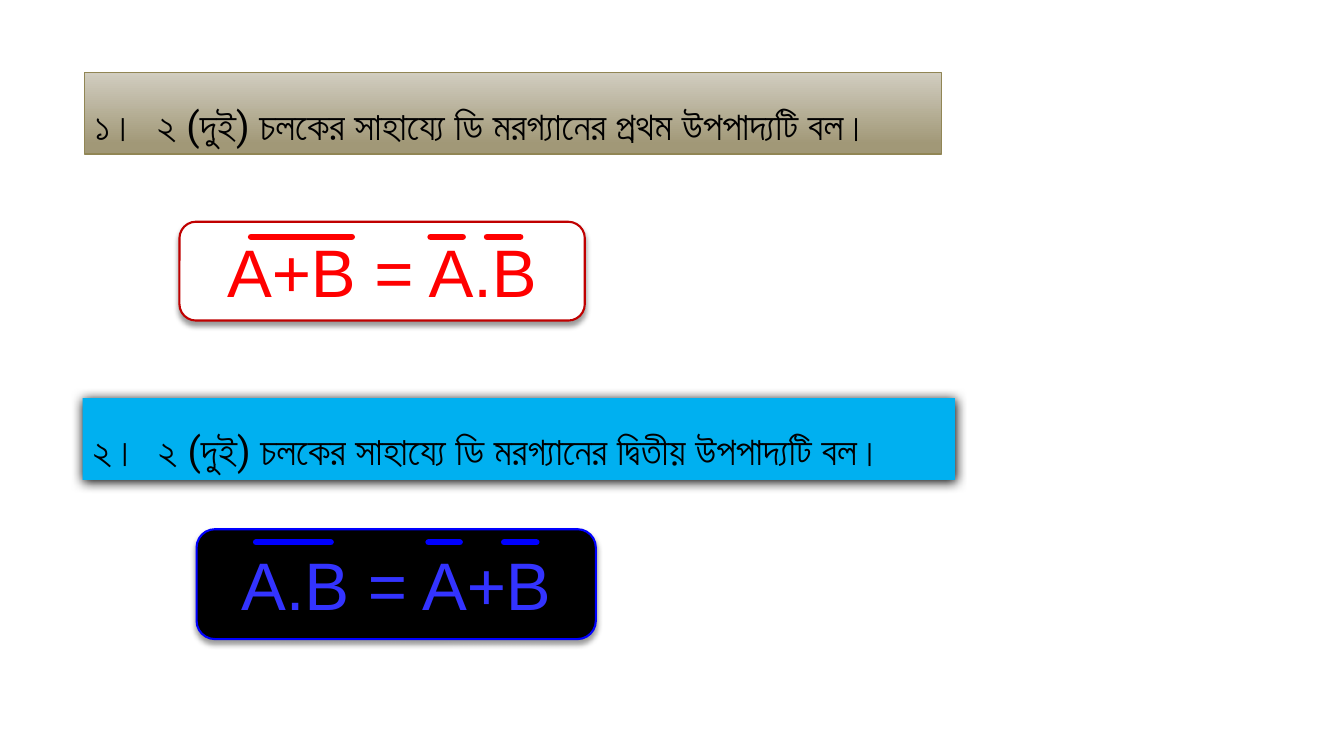
from lxml.etree import SubElement
from pptx import Presentation
from pptx.dml.color import RGBColor
from pptx.enum.shapes import MSO_CONNECTOR, MSO_SHAPE
from pptx.enum.text import MSO_ANCHOR, MSO_AUTO_SIZE, PP_ALIGN
from pptx.oxml.ns import qn
from pptx.util import Inches, Pt

COLORS = {
    "text": "000000", "sand_light": "D1CDC0", "sand_dark": "A19877", "sand_line": "918655",
    "sky": "00B0F0", "white": "FFFFFF", "black": "000000", "dark_red": "C00000",
    "red": "FF0000", "blue": "0000FF", "soft_blue": "3333FF",
}
STRONG_SHADOW = {"opacity": 100, "blur": 8.5, "distance": 1}
SOFT_SHADOW = {"opacity": 40, "blur": 4, "distance": 3}
QUESTION_FRAME = {
    "word_wrap": True, "vertical_anchor": MSO_ANCHOR.TOP,
    "auto_size": MSO_AUTO_SIZE.SHAPE_TO_FIT_TEXT,
}
FORMULA_FRAME = {"word_wrap": True, "vertical_anchor": MSO_ANCHOR.MIDDLE}
QUESTION_FONT = {"name": "Roboto", "size": Pt(28)}
FORMULA_FONT = {"name": "Arial", "size": Pt(48)}


def color(name):
    """Return the named palette colour."""
    return RGBColor.from_string(COLORS[name])


def apply(target, values):
    """Set every attribute of a dict of format values."""
    for name, value in values.items():
        setattr(target, name, value)


def fill_shape(shape, fills):
    """Fill a shape with one colour, or with a downward gradient of two."""
    if len(fills) == 1:
        shape.fill.solid()
        shape.fill.fore_color.rgb = color(fills[0])
        return
    shape.fill.gradient()
    shape.fill.gradient_angle = 270
    for stop, name, position in zip(shape.fill.gradient_stops, fills, (0, 0.88)):
        stop.color.rgb = color(name)
        stop.position = position


def outline(line, name, width):
    """Give a line its colour and width in points, or hide it."""
    if name is None:
        line.fill.background()
        return
    line.color.rgb = color(name)
    line.width = Pt(width)


def cast_shadow(shape, opacity, blur, distance):
    """Add a black shadow that falls straight down."""
    effects = shape._element.spPr.find(qn("a:effectLst"))
    shadow = SubElement(
        effects, qn("a:outerShdw"), blurRad=str(Pt(blur)), dist=str(Pt(distance)),
        dir="5400000", algn="ctr", rotWithShape="0")
    black = SubElement(shadow, qn("a:srgbClr"), val=COLORS["black"])
    SubElement(black, qn("a:alpha"), val=str(opacity * 1000))


def add_box(shapes, kind, box, fills, line, shadow):
    """Add a filled and outlined shape in the given box."""
    shape = shapes.add_shape(kind, *map(Inches, box))
    fill_shape(shape, fills)
    outline(shape.line, *line)
    shape.shadow.inherit = False
    if shadow:
        cast_shadow(shape, **shadow)
    return shape


def write(shape, text, frame_format, font_format, text_color, alignment):
    """Write one formatted paragraph into a shape."""
    apply(shape.text_frame, frame_format)
    paragraph = shape.text_frame.paragraphs[0]
    paragraph.alignment = alignment
    run = paragraph.add_run()
    run.text = text
    apply(run.font, font_format)
    run.font.color.rgb = color(text_color)
    return paragraph


def add_question(slide, box, number, text, fills, line, shadow, tab):
    """Place a numbered question bar, its wording set off by a tab."""
    shape = add_box(slide.shapes, MSO_SHAPE.RECTANGLE, box, fills, line, shadow)
    paragraph = write(shape, f"{number}\t{text}", QUESTION_FRAME, QUESTION_FONT,
                      "text", PP_ALIGN.LEFT)
    paragraph.line_spacing = 1.5
    tabs = SubElement(paragraph._p.get_or_add_pPr(), qn("a:tabLst"))
    SubElement(tabs, qn("a:tab"), pos=str(Inches(tab)), algn="l")


def add_overbar(group, start, end, top, name):
    """Draw one round-ended negation bar."""
    bar = group.shapes.add_connector(
        MSO_CONNECTOR.STRAIGHT, Inches(start), Inches(top), Inches(end), Inches(top))
    outline(bar.line, name, 4.5)
    bar.line._get_or_add_ln().set("cap", "rnd")
    SubElement(bar._element.spPr, qn("a:effectLst"))


def add_formula(slide, box, text, fill, line, text_color, bar_color, bar_top, bars):
    """Place a formula card with bars measured from its top left corner."""
    group = slide.shapes.add_group_shape()
    card = add_box(group.shapes, MSO_SHAPE.FLOWCHART_ALTERNATE_PROCESS, box,
                   [fill], (line, 1.5), SOFT_SHADOW)
    write(card, text, FORMULA_FRAME, FORMULA_FONT, text_color, PP_ALIGN.CENTER)
    left, top = box[:2]
    for start, end in bars:
        add_overbar(group, left + start, left + end, top + bar_top, bar_color)


def main():
    """Build the slide on De Morgan's two theorems."""
    presentation = Presentation()
    presentation.slide_width = Inches(13.33)
    presentation.slide_height = Inches(7.5)
    slide = presentation.slides.add_slide(presentation.slide_layouts[6])
    add_question(slide, (0.84, 0.72, 8.5, 0.81), "১।",
                 "২ (দুই) চলকের সাহায্যে ডি মরগ্যানের প্রথম উপপাদ্যটি বল।",
                 ["sand_light", "sand_dark"], ("sand_line", 1), None, 0.62)
    add_question(slide, (0.82, 3.95, 8.65, 0.81), "২।",
                 "২ (দুই) চলকের সাহায্যে ডি মরগ্যানের দ্বিতীয় উপপাদ্যটি বল।",
                 ["sky"], (None, 0), STRONG_SHADOW, 0.65)
    add_formula(slide, (1.78, 2.2, 4.02, 0.98), "A+B = A.B", "white", "dark_red",
                "red", "red", 0.15, [(0.71, 1.71), (2.49, 2.81), (3.05, 3.38)])
    add_formula(slide, (1.95, 5.25, 3.96, 1.09), "A.B = A+B", "black", "blue",
                "soft_blue", "blue", 0.13, [(0.59, 1.33), (2.3, 2.61), (3.05, 3.37)])
    presentation.save("out.pptx")


if __name__ == "__main__":
    main()
